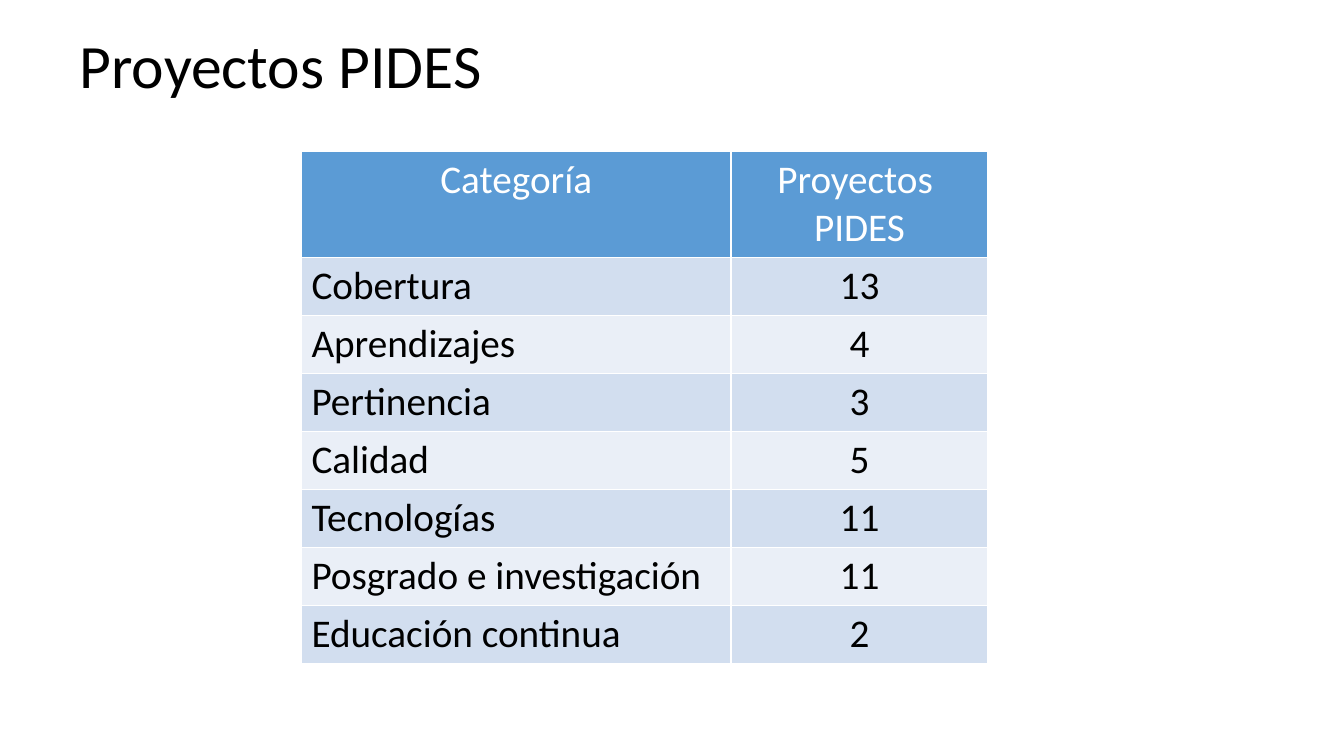
from dataclasses import dataclass

from pptx import Presentation
from pptx.dml.color import RGBColor
from pptx.enum.text import MSO_ANCHOR, MSO_AUTO_SIZE, PP_ALIGN
from pptx.slide import Slide
from pptx.text.text import TextFrame
from pptx.util import Inches, Pt

LEFT, CENTER = PP_ALIGN.LEFT, PP_ALIGN.CENTER
TOP = MSO_ANCHOR.TOP
NO_AUTOFIT = MSO_AUTO_SIZE.NONE
TITLE_ONLY_LAYOUT = 5


@dataclass(frozen=True)
class Theme:
    font: str = "Calibri"
    title_size: int = 44
    table_size: int = 28
    dark_text: RGBColor = RGBColor(0x00, 0x00, 0x00)
    light_text: RGBColor = RGBColor(0xFF, 0xFF, 0xFF)
    header_fill: RGBColor = RGBColor(0x5B, 0x9B, 0xD5)
    band_fills: tuple[RGBColor, RGBColor] = (
        RGBColor(0xD2, 0xDE, 0xEF),
        RGBColor(0xEA, 0xEF, 0xF7),
    )


@dataclass(frozen=True)
class Category:
    name: str
    projects: int


THEME = Theme()
TITLE = "Proyectos PIDES"
HEADERS = ("Categoría", "Proyectos \nPIDES")
CATEGORIES = (
    Category("Cobertura", 13),
    Category("Aprendizajes", 4),
    Category("Pertinencia", 3),
    Category("Calidad", 5),
    Category("Tecnologías", 11),
    Category("Posgrado e investigación", 11),
    Category("Educación continua", 2),
)
COLUMN_WIDTHS = (4.26, 2.55)
HEADER_HEIGHT, ROW_HEIGHT = 1.05, 0.57


def write_text(
    frame: TextFrame,
    text: str,
    *,
    size: int,
    color: RGBColor,
    align: PP_ALIGN = LEFT,
    line_spacing: float = 1.0,
) -> None:
    """Fill the frame with one paragraph per line of text."""
    frame.text = text
    for para in frame.paragraphs:
        para.alignment = align
        para.line_spacing = line_spacing
        for span in para.runs:
            span.font.name = THEME.font
            span.font.size = Pt(size)
            span.font.bold = False
            span.font.color.rgb = color


def add_title(page: Slide) -> None:
    title = page.shapes.title
    title.left, title.top = Inches(0.69), Inches(0.3)
    title.width, title.height = Inches(8.62), Inches(1.09)
    frame = title.text_frame
    frame.word_wrap = True
    frame.auto_size = NO_AUTOFIT
    frame.vertical_anchor = TOP
    write_text(frame, TITLE, size=THEME.title_size, color=THEME.dark_text, line_spacing=0.9)


def add_project_table(page: Slide) -> None:
    rows = [HEADERS] + [(item.name, str(item.projects)) for item in CATEGORIES]
    heights = [HEADER_HEIGHT] + [ROW_HEIGHT] * len(CATEGORIES)
    table = page.shapes.add_table(
        len(rows), len(HEADERS), Inches(2.99), Inches(1.5),
        Inches(sum(COLUMN_WIDTHS)), Inches(sum(heights)),
    ).table
    for column, width in zip(table.columns, COLUMN_WIDTHS):
        column.width = Inches(width)

    for row_index, (texts, height) in enumerate(zip(rows, heights)):
        is_header = row_index == 0
        table.rows[row_index].height = Inches(height)
        fill = THEME.header_fill if is_header else THEME.band_fills[(row_index - 1) % 2]
        color = THEME.light_text if is_header else THEME.dark_text
        for column_index, text in enumerate(texts):
            cell = table.cell(row_index, column_index)
            cell.fill.solid()
            cell.fill.fore_color.rgb = fill
            align = CENTER if is_header or column_index == 1 else LEFT
            write_text(cell.text_frame, text, size=THEME.table_size, color=color, align=align)


def main() -> None:
    deck = Presentation()
    deck.slide_width, deck.slide_height = Inches(13.33), Inches(7.5)
    page = deck.slides.add_slide(deck.slide_layouts[TITLE_ONLY_LAYOUT])
    add_title(page)
    add_project_table(page)
    deck.save("out.pptx")


if __name__ == "__main__":
    main()
